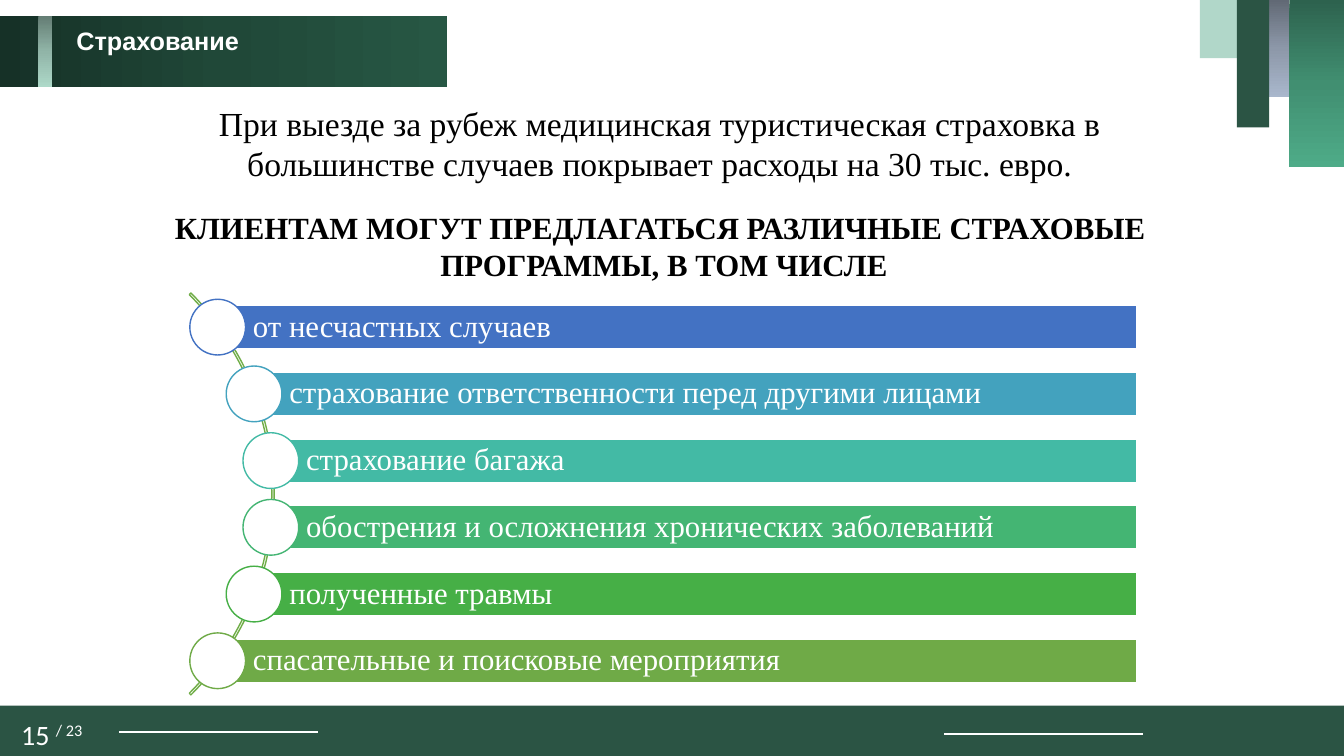
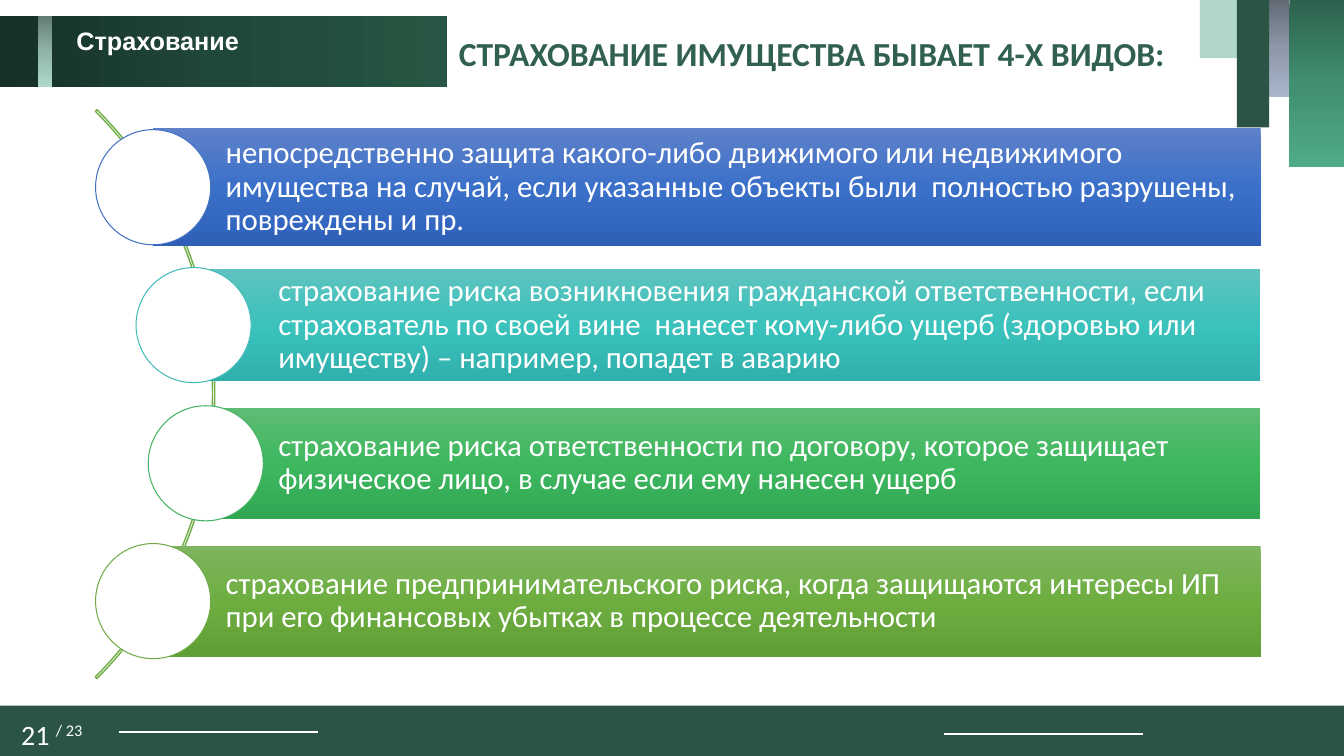
"""Build two insurance slides with a shared header, corner ornament and footer."""
from lxml import etree
from pptx import Presentation
from pptx.dml.color import RGBColor
from pptx.enum.shapes import MSO_CONNECTOR, MSO_SHAPE
from pptx.enum.text import MSO_ANCHOR, PP_ALIGN
from pptx.oxml.ns import qn
from pptx.util import Pt

RECTANGLE, OVAL, ARC = MSO_SHAPE.RECTANGLE, MSO_SHAPE.OVAL, MSO_SHAPE.BLOCK_ARC
STRAIGHT = MSO_CONNECTOR.STRAIGHT
LEFT, CENTER = PP_ALIGN.LEFT, PP_ALIGN.CENTER
MIDDLE = MSO_ANCHOR.MIDDLE

WHITE = RGBColor(0xFF, 0xFF, 0xFF)
BLACK = RGBColor(0x00, 0x00, 0x00)
DARK_GREEN = RGBColor(0x2B, 0x54, 0x44)
TITLE_GREEN = RGBColor(0x31, 0x61, 0x4E)
MINT = RGBColor(0xB1, 0xD7, 0xC9)
ARC_GREEN = RGBColor(0x70, 0xAD, 0x47)
BLUE = RGBColor(0x43, 0x72, 0xC3)
SKY = RGBColor(0x43, 0xA2, 0xBE)
TEAL = RGBColor(0x43, 0xBA, 0xA5)
SEA = RGBColor(0x44, 0xB5, 0x73)
GREEN = RGBColor(0x46, 0xAF, 0x46)
OLIVE = RGBColor(0x6F, 0xAA, 0x47)
TURQUOISE = RGBColor(0x43, 0xBC, 0xB8)
EMERALD = RGBColor(0x45, 0xB3, 0x63)

HEADER_GRADIENT = ("163127", "204838", "275744")
STRIPE_GRADIENT = ("647D74", "91B5A8", "AED9C9")
GRAY_GRADIENT = ("616975", "8D98A9", "A9B7CC")
GREEN_GRADIENT = ("2D624E", "418F71", "4EAB88")

ARC_THICKNESS = 1.65
SERIF, SANS, HEADING = "Times New Roman", "Calibri", "Arial"

DECORATIONS = [
    (0, 504, 960, 36, DARK_GREEN, 0),
    (906.5, 0, 14.5, 69.5, GRAY_GRADIENT, 270),
    (921, 0, 39, 119.5, GREEN_GRADIENT, 270),
    (857, 0, 27, 41.5, MINT, 0),
    (883.5, 0, 23, 91, DARK_GREEN, 0),
    (0, 11.5, 319, 51, HEADER_GRADIENT, 0),
    (27.5, 11.5, 10, 51, STRIPE_GRADIENT, 270),
]
FOOTER_LINES = [(85, 522.7), (674.6, 524.2)]

PROGRAMS = [
    ("от несчастных случаев", 155.5, BLUE),
    ("страхование ответственности перед другими лицами", 181.5, SKY),
    ("страхование багажа", 193.5, TEAL),
    ("обострения и осложнения хронических заболеваний", 193.5, SEA),
    ("полученные травмы", 181.5, GREEN),
    ("спасательные и поисковые мероприятия", 155.5, OLIVE),
]
PROGRAM_ROWS = [(text, left, 218.2 + 47.66 * index, 31, left, color, color)
                for index, (text, left, color) in enumerate(PROGRAMS)]
PROPERTY_ROWS = [
    ("непосредственно защита какого-либо движимого или недвижимого имущества на случай, "
     "если указанные объекты были  полностью разрушены, повреждены и пр.",
     109.4, 91.5, 84.5, 109.4, BLUE, ("5E81C9", "3B70C9", "2E60B8")),
    ("страхование риска возникновения гражданской ответственности, если страхователь по "
     "своей вине  нанесет кому-либо ущерб (здоровью или имуществу) – например, попадет в аварию",
     147, 192, 80.5, 138.3, TURQUOISE, ("5EC3BF", "3BC2BC", "30B0AC")),
    ("страхование риска ответственности по договору, которое защищает физическое лицо, "
     "в случае если ему нанесен ущерб",
     147, 291.2, 79.5, 147, EMERALD, ("5EBC74", "3EB85F", "32A753")),
    ("страхование предпринимательского риска, когда защищаются интересы ИП при его "
     "финансовых убытках в процессе деятельности",
     109.4, 389.8, 79.2, 109.4, OLIVE, ("7EB45F", "6EAE41", "5F9E35")),
]

INTRO = [
    ("При выезде за рубеж медицинская туристическая страховка в \n"
     "большинстве случаев покрывает расходы на 30 тыс. евро. ", 24, False, 0),
    ("КЛИЕНТАМ МОГУТ ПРЕДЛАГАТЬСЯ РАЗЛИЧНЫЕ СТРАХОВЫЕ ", 22, True, 18.4),
    ("ПРОГРАММЫ, В ТОМ ЧИСЛЕ", 22, True, 0),
]
PROPERTY_TITLE = [("СТРАХОВАНИЕ ИМУЩЕСТВА БЫВАЕТ 4-Х ВИДОВ: ", 24, True, 0)]

SLIDES = [
    {"number": "15 ", "heading": INTRO, "heading_box": (27.4, 69.8, 893.5, 143.3),
     "heading_font": SERIF, "heading_color": BLACK, "arc": (-210.2, 149.8, 406),
     "rows": PROGRAM_ROWS, "right": 812.2, "font": SERIF, "inset": 25.2,
     "circle": 39.8, "circle_line": 1, "bar_line": WHITE},
    {"number": "21 ", "heading": PROPERTY_TITLE, "heading_box": (315.4, 20.2, 534.2, 36),
     "heading_font": SANS, "heading_color": TITLE_GREEN, "arc": (-421.2, -5.8, 574.6),
     "rows": PROPERTY_ROWS, "right": 900.4, "font": SANS, "inset": 51.8,
     "circle": 82.2, "circle_line": 0.75, "bar_line": None},
]


def add_shape(slide, kind, box, fill=None, line=None, weight=1, angle=270):
    """Add a shape whose fill is a colour, three gradient colours or nothing."""
    shape = slide.shapes.add_shape(kind, *(Pt(length) for length in box))
    shape.shadow.inherit = False
    if fill is None:
        shape.fill.background()
    elif isinstance(fill, RGBColor):
        shape.fill.solid()
        shape.fill.fore_color.rgb = fill
    else:
        shape.fill.gradient()
        shape.fill.gradient_angle = angle
        stops = shape._element.spPr.find(qn("a:gradFill")).find(qn("a:gsLst"))
        for stop in list(stops):
            stops.remove(stop)
        for position, color in zip(("0", "50000", "100000"), fill):
            stop = etree.SubElement(stops, qn("a:gs"), pos=position)
            etree.SubElement(stop, qn("a:srgbClr"), val=color)
    if line is None:
        shape.line.fill.background()
    else:
        shape.line.color.rgb = line
        shape.line.width = Pt(weight)
    return shape


def add_run(paragraph, text, font, size, color=WHITE, bold=False):
    """Add one formatted run."""
    run = paragraph.add_run()
    run.text = text
    run.font.name = font
    run.font.size = Pt(size)
    run.font.color.rgb = color
    run.font.bold = bold
    return run


presentation = Presentation()
presentation.slide_width = Pt(960)
presentation.slide_height = Pt(540)

for content in SLIDES:
    slide = presentation.slides.add_slide(presentation.slide_layouts[6])

    for *box, fill, angle in DECORATIONS:
        add_shape(slide, RECTANGLE, box, fill, angle=angle)
    for left, top in FOOTER_LINES:
        connector = slide.shapes.add_connector(
            STRAIGHT, Pt(left), Pt(top), Pt(left + 142), Pt(top))
        connector.line.color.rgb = WHITE
        connector.line.width = Pt(1.5)
        etree.SubElement(connector._element.spPr, qn("a:effectLst"))

    page_box = slide.shapes.add_textbox(Pt(-2.2), Pt(513.4), Pt(78.5), Pt(27.4))
    page_box.text_frame.word_wrap = True
    paragraph = page_box.text_frame.paragraphs[0]
    paragraph.alignment = CENTER
    paragraph.line_spacing = 0.8
    add_run(paragraph, content["number"], SANS, 20)
    total = add_run(paragraph, "/ 23", SANS, 20)
    total.font._element.set("baseline", "30000")

    section_box = slide.shapes.add_textbox(Pt(47.5), Pt(18.7), Pt(131.8), Pt(24.5))
    section_box.text_frame.word_wrap = True
    paragraph = section_box.text_frame.paragraphs[0]
    paragraph.line_spacing = 0.8
    add_run(paragraph, "Страхование", HEADING, 18, bold=True)

    heading_box = slide.shapes.add_textbox(*(Pt(length) for length in content["heading_box"]))
    frame = heading_box.text_frame
    frame.word_wrap = True
    for index, (text, size, bold, space) in enumerate(content["heading"]):
        paragraph = frame.add_paragraph() if index else frame.paragraphs[0]
        paragraph.alignment = CENTER
        paragraph.space_before = Pt(space)
        for line_index, line in enumerate(text.split("\n")):
            if line_index:
                paragraph.add_line_break()
            add_run(paragraph, line, content["heading_font"], size,
                    content["heading_color"], bold)

    left, top, diameter = content["arc"]
    arc = add_shape(slide, ARC, (left, top, diameter, diameter), line=ARC_GREEN)
    for index, value in enumerate((189, 27, ARC_THICKNESS / diameter)):
        arc.adjustments[index] = value

    circle = content["circle"]
    for text, left, top, height, center, color, fill in content["rows"]:
        bar = add_shape(slide, RECTANGLE, (left, top, content["right"] - left, height),
                        fill, content["bar_line"])
        frame = bar.text_frame
        frame.word_wrap = True
        frame.vertical_anchor = MIDDLE
        frame.margin_left = Pt(content["inset"])
        frame.margin_right = frame.margin_top = frame.margin_bottom = Pt(4.3)
        paragraph = frame.paragraphs[0]
        paragraph.alignment = LEFT
        paragraph.line_spacing = 0.9
        add_run(paragraph, text, content["font"], 22)
        add_shape(slide, OVAL,
                  (center - circle / 2, top + height / 2 - circle / 2, circle, circle),
                  WHITE, color, content["circle_line"])

presentation.save("out.pptx")
